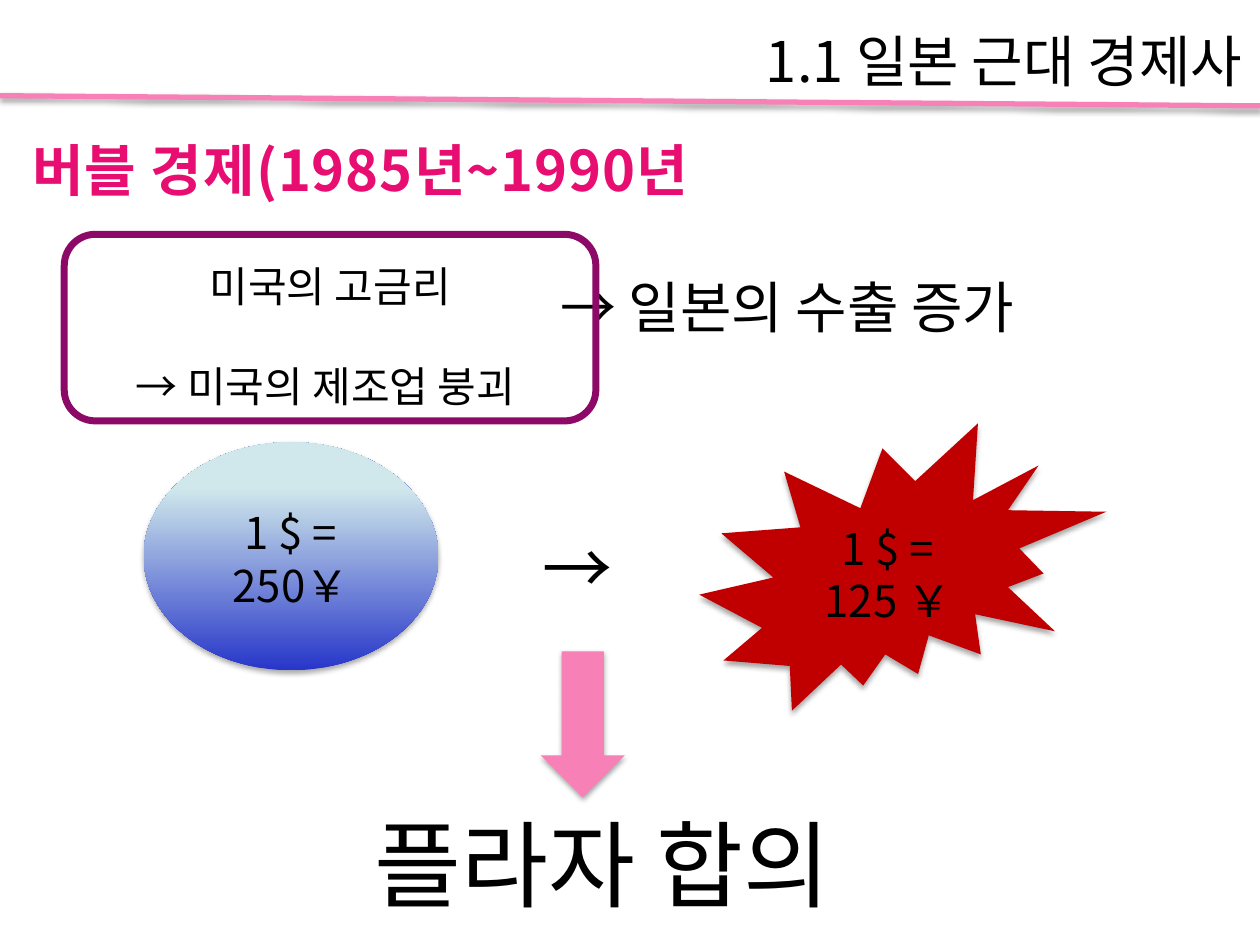
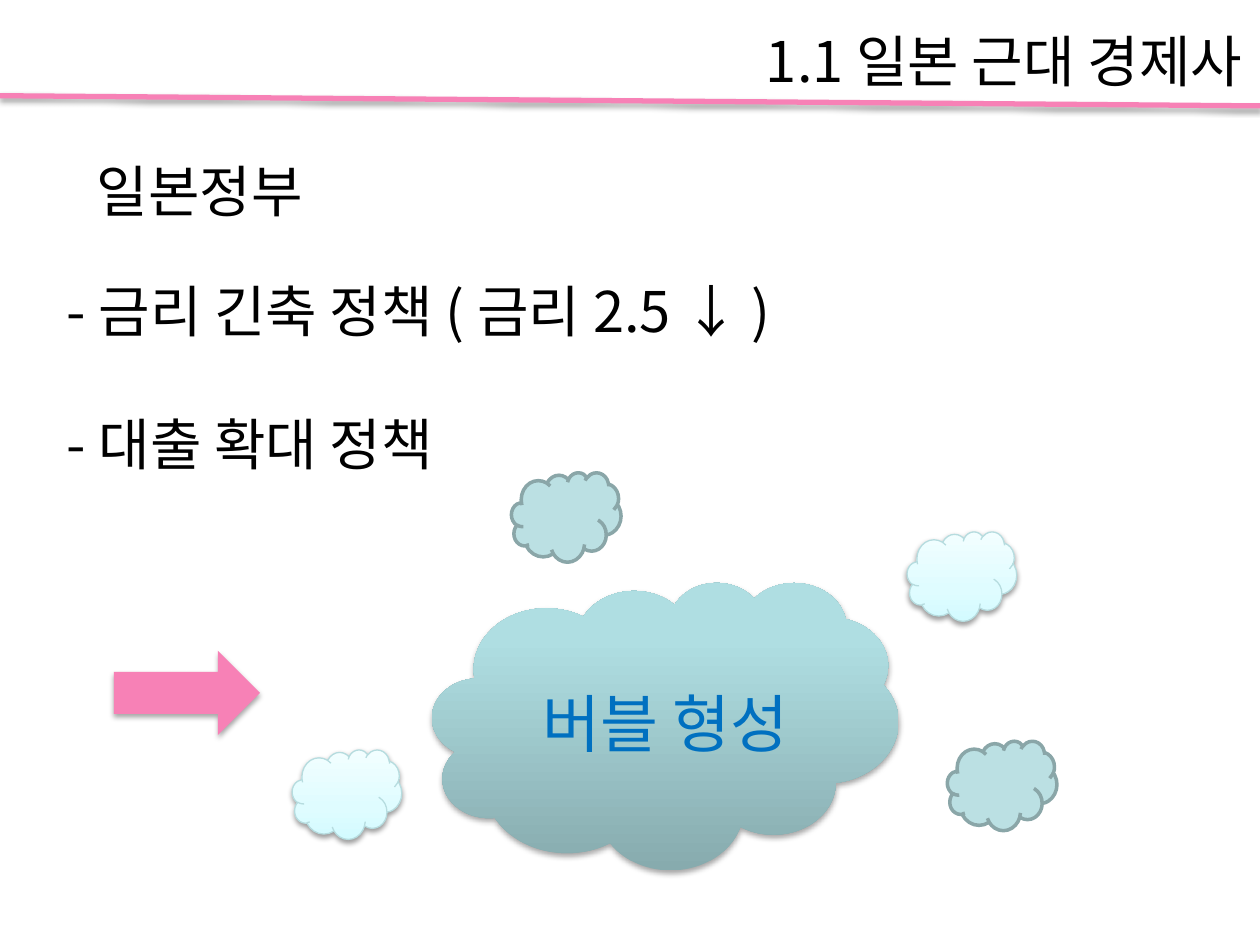
"""Build two slides on the economic history of modern Japan."""
from copy import deepcopy
from dataclasses import dataclass
from typing import Optional, Union

from lxml import etree
from pptx import Presentation
from pptx.dml.color import RGBColor
from pptx.enum import shapes, text
from pptx.oxml.ns import qn
from pptx.util import Pt

FONT = "Noto Sans CJK KR"
LINE_HEIGHT = 1.19
TOP_SHIFT = 0.11
INSET = 3.6

BLACK = RGBColor(0x00, 0x00, 0x00)
WHITE = RGBColor(0xFF, 0xFF, 0xFF)
PINK = RGBColor(0xF7, 0x81, 0xB6)
MAGENTA = RGBColor(0xE8, 0x0E, 0x71)
PURPLE = RGBColor(0x8D, 0x09, 0x67)
RED = RGBColor(0xC0, 0x00, 0x00)
BLUE = RGBColor(0x00, 0x70, 0xC0)
AQUA = RGBColor(0xBB, 0xE0, 0xE3)
AQUA_EDGE = RGBColor(0x8A, 0xA6, 0xA8)
PALE_EDGE = RGBColor(0xB6, 0xDC, 0xDF)

Gradient = tuple[tuple[float, RGBColor], ...]
BLUE_FADE: Gradient = ((0, RGBColor(0x27, 0x36, 0xC9)), (0.8, RGBColor(0xD0, 0xE8, 0xEB)),
                       (1, RGBColor(0xD1, 0xEA, 0xEC)))
TEAL_FADE: Gradient = ((0, RGBColor(0x87, 0xAB, 0xAE)), (0.8, RGBColor(0xAF, 0xDE, 0xE2)),
                       (1, RGBColor(0xAF, 0xE0, 0xE4)))
PALE_FADE: Gradient = ((0, RGBColor(0xD3, 0xFB, 0xFF)), (0.35, RGBColor(0xDF, 0xFC, 0xFF)),
                       (1, RGBColor(0xF2, 0xFE, 0xFF)))

Kind = shapes.MSO_SHAPE
LEFT, CENTER, RIGHT = text.PP_ALIGN.LEFT, text.PP_ALIGN.CENTER, text.PP_ALIGN.RIGHT
TOP, MIDDLE = text.MSO_ANCHOR.TOP, text.MSO_ANCHOR.MIDDLE


@dataclass(frozen=True)
class Shadow:
    """A soft shadow falling straight down."""
    opacity: int = 35
    blur: float = 3.1
    distance: float = 1.8


SOFT = Shadow()
CLOUD_SHADOW = Shadow(38, 3.1, 1.6)


@dataclass(frozen=True)
class Label:
    """Text with one style; paragraphs are set apart by gap."""
    lines: tuple[str, ...]
    size: float = 32
    color: RGBColor = BLACK
    align: text.PP_ALIGN = LEFT
    anchor: text.MSO_ANCHOR = TOP
    bold: bool = False
    spacing: float = 0
    gap: float = 0
    drop: float = 0


@dataclass(frozen=True)
class Item:
    """A preset shape, or a text box when kind is None."""
    box: tuple[float, float, float, float]
    kind: Optional[Kind] = None
    label: Optional[Label] = None
    fill: Union[RGBColor, Gradient, None] = None
    line: Optional[tuple[RGBColor, float]] = None
    shadow: Optional[Shadow] = None
    rotation: float = 0


def set_shadow(shape, shadow: Optional[Shadow]) -> None:
    """Replace the theme shadow with the given one, or with none."""
    effects = etree.SubElement(shape._element.spPr, qn("a:effectLst"))
    if shadow:
        outer = etree.SubElement(effects, qn("a:outerShdw"), blurRad=str(Pt(shadow.blur)),
                                 dist=str(Pt(shadow.distance)), dir="5400000", rotWithShape="0")
        color = etree.SubElement(outer, qn("a:srgbClr"), val=str(BLACK))
        etree.SubElement(color, qn("a:alpha"), val=str(shadow.opacity * 1000))


def set_fill(shape, fill: Union[RGBColor, Gradient, None]) -> None:
    """Give a shape a plain fill, an upward gradient or no fill."""
    if fill is None:
        shape.fill.background()
    elif isinstance(fill, RGBColor):
        shape.fill.solid()
        shape.fill.fore_color.rgb = fill
    else:
        shape.fill.gradient()
        shape.fill.gradient_angle = 90
        stops = shape._element.spPr.find(".//" + qn("a:gsLst"))
        while len(stops) < len(fill):
            stops.append(deepcopy(stops[0]))
        for stop, (position, color) in zip(shape.fill.gradient_stops, fill):
            stop.position = position
            stop.color.rgb = color


def set_line(shape, line: Optional[tuple[RGBColor, float]]) -> None:
    """Give a shape an outline of a colour and width, or none."""
    if line is None:
        shape.line.fill.background()
    else:
        shape.line.color.rgb, shape.line.width = line[0], Pt(line[1])


def write_label(shape, label: Label) -> None:
    """Write the paragraphs of a label into a shape."""
    frame = shape.text_frame
    frame.word_wrap = True
    frame.vertical_anchor = label.anchor
    frame.margin_top = Pt(INSET + TOP_SHIFT * label.size + label.drop)
    for index, line in enumerate(label.lines):
        paragraph = frame.add_paragraph() if index else frame.paragraphs[0]
        paragraph.alignment = label.align
        paragraph.line_spacing = Pt(LINE_HEIGHT * label.size)
        if index:
            paragraph.space_before = Pt(label.gap)
        run = paragraph.add_run()
        run.text = line
        run.font.name = FONT
        run.font.size = Pt(label.size)
        run.font.bold = label.bold
        run.font.color.rgb = label.color
        properties = run.font._element
        etree.SubElement(properties, qn("a:ea"), typeface=FONT)
        if label.spacing:
            properties.set("spc", str(round(label.spacing * 100)))


def draw(slide, item: Item) -> None:
    """Draw one item on a slide."""
    box = [Pt(length) for length in item.box]
    if item.kind is None:
        shape = slide.shapes.add_textbox(*box)
    else:
        shape = slide.shapes.add_shape(item.kind, *box)
        set_fill(shape, item.fill)
        set_line(shape, item.line)
        set_shadow(shape, item.shadow)
        shape.rotation = item.rotation
    if item.label:
        write_label(shape, item.label)


def draw_header(slide) -> None:
    """Draw the section title and the slanted rule under it."""
    rule = slide.shapes.add_connector(shapes.MSO_CONNECTOR.STRAIGHT,
                                      Pt(0), Pt(54.7), Pt(720), Pt(60.5))
    set_line(rule, (PINK, 3))
    set_shadow(rule, SOFT)
    draw(slide, Item((382.3, 8.6, 334.8, 46.1), label=Label(("1.1 일본 근대 경제사",), align=RIGHT)))


def pink_arrow(left: float, top: float, rotation: float = 0) -> Item:
    """Return a block arrow, pointing down unless rotated."""
    return Item((left, top, 48.2, 83.5), Kind.DOWN_ARROW, fill=PINK, shadow=SOFT, rotation=rotation)


def pale_cloud(left: float, top: float) -> Item:
    """Return a small shaded cloud."""
    return Item((left, top, 62.6, 51.1), Kind.CLOUD, fill=PALE_FADE,
                line=(PALE_EDGE, 0.75), shadow=CLOUD_SHADOW)


def flat_cloud(left: float, top: float) -> Item:
    """Return a small plain cloud."""
    return Item((left, top, 62.6, 51.1), Kind.CLOUD, fill=AQUA, line=(AQUA_EDGE, 2))


def rate_label(rate: str) -> Label:
    """Return an exchange rate centred in its shape."""
    return Label((rate,), 25, align=CENTER, anchor=MIDDLE)


PLAZA_ACCORD = (
    Item((313, 148.8, 300, 46), label=Label(("→ 일본의 수출 증가",))),
    Item((36.7, 133.9, 303.8, 106.6), Kind.ROUNDED_RECTANGLE,
         Label(("미국의 고금리", "→ 미국의 제조업 붕괴 "), 24, align=CENTER, anchor=MIDDLE,
               gap=28.6, drop=7.2),
         line=(PURPLE, 4)),
    Item((190.1, 451.4, 320.4, 72.7), label=Label(("플라자 합의 ",), 54, align=CENTER)),
    Item((82.1, 252.7, 168.5, 130.3), Kind.OVAL, rate_label("1 $ = 250￥"), BLUE_FADE, shadow=SOFT),
    Item((399.6, 241.9, 232.6, 164.2), Kind.EXPLOSION2, rate_label("1 $ = 125 ￥"), RED, shadow=SOFT),
    Item((11.5, 70.6, 450.7, 46.1), Kind.RECTANGLE,
         Label(("버블 경제(1985년~1990년",), color=MAGENTA, bold=True, spacing=0.5),
         line=(WHITE, 0.75)),
    pink_arrow(308.9, 372.2),
    Item((303.1, 292.3, 84.2, 55.4), label=Label(("→",), 40)),
)

BUBBLE_FORMATION = (
    pink_arrow(82.8, 354.2, 270),
    Item((247, 332.6, 266.4, 164.2), Kind.CLOUD,
         Label(("버블 형성",), 36, BLUE, RIGHT, MIDDLE), TEAL_FADE, shadow=SOFT),
    pale_cloud(518.4, 303.8),
    flat_cloud(541.4, 423.4),
    flat_cloud(292.3, 270),
    pale_cloud(167, 428.4),
    Item((48.2, 82.8, 198.7, 46.1), label=Label(("일본정부",))),
    Item((31, 151.2, 465.1, 123.8),
         label=Label(("- 금리 긴축 정책 ( 금리 2.5 ↓ )", "- 대출 확대 정책"), gap=38.1)),
)


def main() -> None:
    """Build and save the presentation."""
    presentation = Presentation()
    presentation.slide_width, presentation.slide_height = Pt(720), Pt(540)
    for items in (PLAZA_ACCORD, BUBBLE_FORMATION):
        slide = presentation.slides.add_slide(presentation.slide_layouts[6])
        draw_header(slide)
        for item in items:
            draw(slide, item)
    presentation.save("out.pptx")


if __name__ == "__main__":
    main()
